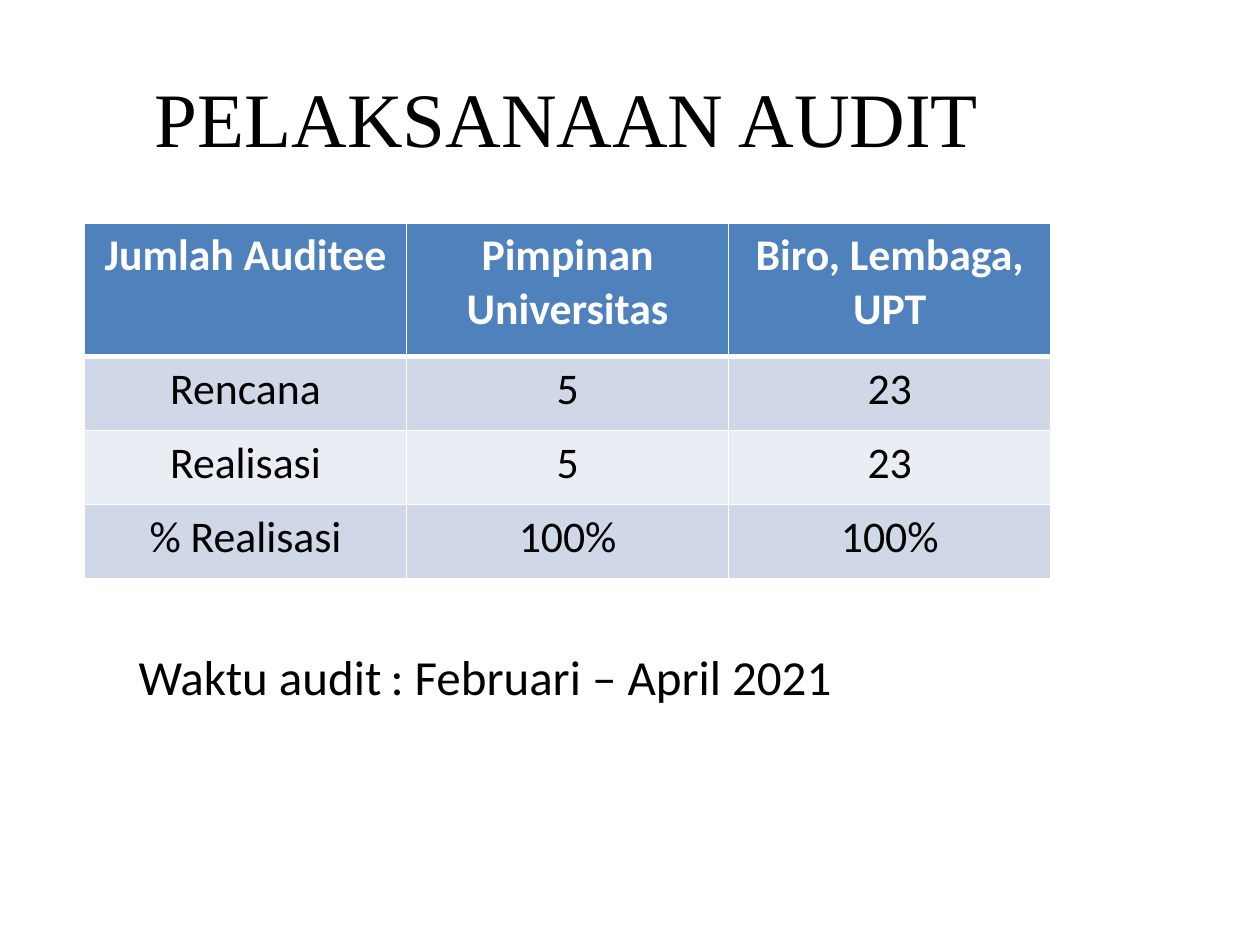
from dataclasses import dataclass

from lxml import etree
from pptx import Presentation
from pptx.dml.color import RGBColor
from pptx.enum.text import MSO_ANCHOR, PP_ALIGN
from pptx.oxml.ns import qn
from pptx.util import Inches, Pt

LEFT, MID = PP_ALIGN.LEFT, PP_ALIGN.CENTER
CENTER = MSO_ANCHOR.MIDDLE


@dataclass(frozen=True)
class Theme:
    black: str = "000000"
    white: str = "FFFFFF"
    head: str = "4F81BD"
    bands: tuple = ("D0D8E8", "E9EDF4")
    serif: str = "Times New Roman"
    sans: str = "Calibri"
    title: int = 44
    note: int = 28
    cell: int = 25


THEME = Theme()

ROWS = [
    ("Jumlah Auditee", "Pimpinan Universitas", "Biro, Lembaga, UPT"),
    ("Rencana", "5", "23"),
    ("Realisasi", "5", "23"),
    ("% Realisasi", "100%", "100%"),
]


def write(frame, text, size, font=THEME.sans, color=THEME.black, bold=False, align=MID):
    para = frame.paragraphs[0]
    para.alignment = align
    para.space_before = Pt(0)
    run = para.add_run()
    run.text = text
    run.font.size = Pt(size)
    run.font.name = font
    run.font.bold = bold
    run.font.color.rgb = RGBColor.from_string(color)


def place(shape, box):
    shape.left, shape.top, shape.width, shape.height = map(Inches, box)


def edge(cell, side, width):
    """Draw one white border; side is L, R, T or B."""
    line = etree.SubElement(cell._tc.get_or_add_tcPr(), qn(f"a:ln{side}"), w=str(Pt(width)))
    fill = etree.SubElement(line, qn("a:solidFill"))
    etree.SubElement(fill, qn("a:srgbClr"), val=THEME.white)


def add_title(slide, box):
    title = slide.shapes.title
    place(title, box)
    title.text_frame.vertical_anchor = CENTER
    write(title.text_frame, "PELAKSANAAN AUDIT", THEME.title, font=THEME.serif)


def add_note(slide, box, stop):
    """Write label and value, the value starting at the tab stop."""
    body = slide.placeholders[1]
    place(body, box)
    props = body.text_frame.paragraphs[0]._p.get_or_add_pPr()
    props.set("marL", "0")
    props.set("indent", "0")
    etree.SubElement(props, qn("a:buNone"))
    tabs = etree.SubElement(props, qn("a:tabLst"))
    etree.SubElement(tabs, qn("a:tab"), pos=str(Inches(stop)), algn="l")
    write(body.text_frame, "Waktu audit\t: Februari – April 2021", THEME.note, align=LEFT)


def add_grid(slide, box, top):
    """Fill the box with the table; top is the height of its head row."""
    height = box[3]
    grid = slide.shapes.add_table(len(ROWS), len(ROWS[0]), *map(Inches, box)).table
    rest = (height - top) / (len(ROWS) - 1)
    for r, texts in enumerate(ROWS):
        head = r == 0
        grid.rows[r].height = Inches(top if head else rest)
        fill = THEME.head if head else THEME.bands[(r - 1) % 2]
        for c, text in enumerate(texts):
            cell = grid.cell(r, c)
            for side in "LRTB":
                thick = (head and side == "B") or (r == 1 and side == "T")
                edge(cell, side, 3 if thick else 1)
            cell.fill.solid()
            cell.fill.fore_color.rgb = RGBColor.from_string(fill)
            write(cell.text_frame, text, THEME.cell, bold=head,
                  color=THEME.white if head else THEME.black)


def main():
    deck = Presentation()
    deck.slide_width, deck.slide_height = Inches(10), Inches(7.5)
    slide = deck.slides.add_slide(deck.slide_layouts[1])
    add_title(slide, (0, 0.3, 9, 1.25))
    add_note(slide, (1, 5.08, 9, 1.83), stop=2.45)
    add_grid(slide, (0.67, 1.77, 7.67, 2.82), top=1.06)
    deck.save("out.pptx")


if __name__ == "__main__":
    main()
